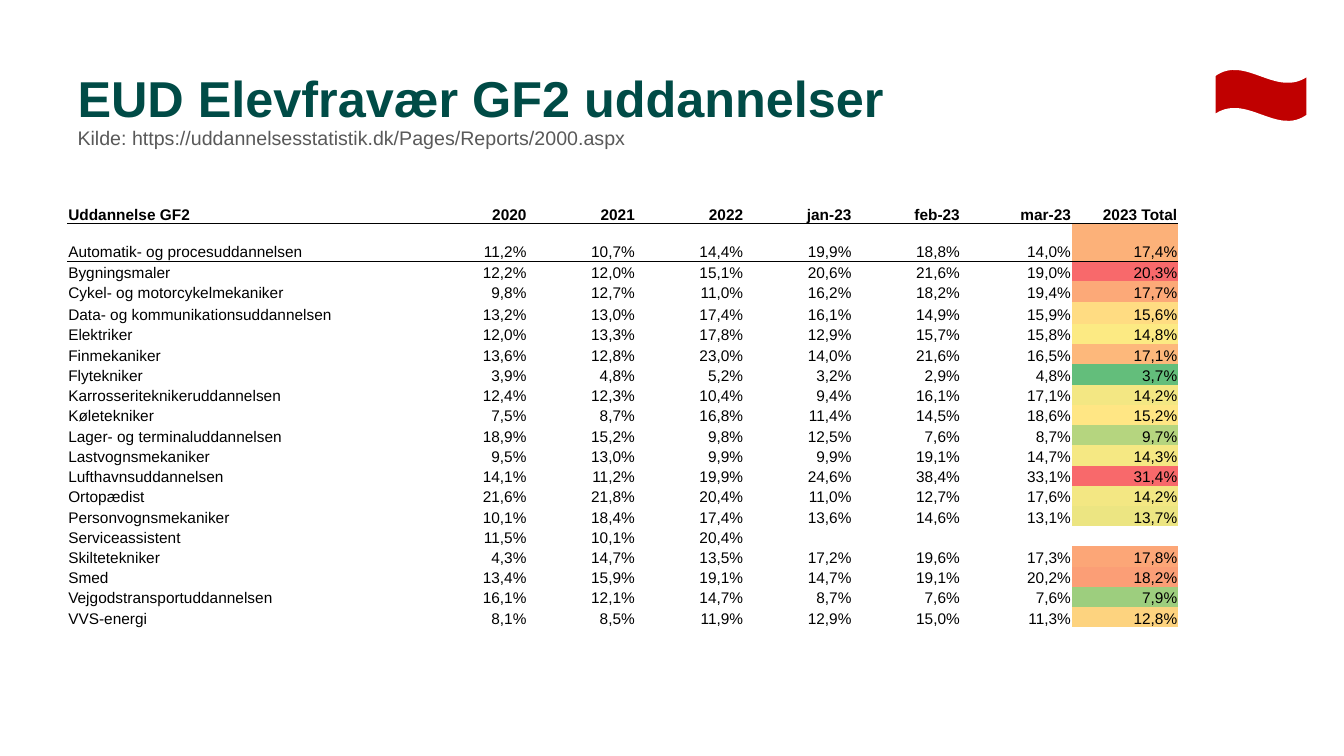
from dataclasses import dataclass

from lxml import etree
from pptx import Presentation
from pptx.dml.color import RGBColor
from pptx.enum.shapes import MSO_SHAPE
from pptx.enum.text import MSO_ANCHOR, MSO_AUTO_SIZE, PP_ALIGN
from pptx.oxml.ns import qn
from pptx.util import Cm, Pt

WAVE = MSO_SHAPE.WAVE
TOP = MSO_ANCHOR.TOP
BOTTOM = MSO_ANCHOR.BOTTOM
LEFT = PP_ALIGN.LEFT
RIGHT = PP_ALIGN.RIGHT
NO_AUTOFIT = MSO_AUTO_SIZE.NONE
NO_GRID_STYLE = "{2D5ABB26-0587-4C30-8999-92F81FD0307C}"


@dataclass(frozen=True)
class Theme:
    font: str = "Arial"
    title_size: int = 36
    source_size: int = 14
    table_size: int = 11
    title_color: str = "004B46"
    source_color: str = "595959"
    text_color: str = "000000"
    flag_color: str = "C00000"
    flag_line: str = "FFFFFF"


@dataclass(frozen=True)
class Box:
    left: float
    top: float
    width: float
    height: float

    def lengths(self):
        return Cm(self.left), Cm(self.top), Cm(self.width), Cm(self.height)


THEME = Theme()
TITLE = "EUD Elevfravær GF2 uddannelser"
SOURCE = "Kilde: https://uddannelsesstatistik.dk/Pages/Reports/2000.aspx"
HEADINGS = ["Uddannelse GF2", "2020", "2021", "2022", "jan-23", "feb-23", "mar-23", "2023 Total"]
COLUMN_WIDTHS = [8.86] + [2.73] * 5 + [2.8, 2.68]
TALL_ROW, MEDIUM_ROW, ROW = 0.94, 0.56, 0.51
ROW_HEIGHTS = [TALL_ROW] * 2 + [ROW] * 2 + [MEDIUM_ROW] + [ROW] * 15
ABSENCE = [
    ("Automatik- og procesuddannelsen", "11,2 10,7 14,4 19,9 18,8 14,0 17,4", "FCB179"),
    ("Bygningsmaler", "12,2 12,0 15,1 20,6 21,6 19,0 20,3", "F8696B"),
    ("Cykel- og motorcykelmekaniker", "9,8 12,7 11,0 16,2 18,2 19,4 17,7", "FCA978"),
    ("Data- og kommunikationsuddannelsen", "13,2 13,0 17,4 16,1 14,9 15,9 15,6", "FFDC82"),
    ("Elektriker", "12,0 13,3 17,8 12,9 15,7 15,8 14,8", "FCEA83"),
    ("Finmekaniker", "13,6 12,8 23,0 14,0 21,6 16,5 17,1", "FDB87B"),
    ("Flytekniker", "3,9 4,8 5,2 3,2 2,9 4,8 3,7", "63BE7B"),
    ("Karrosseriteknikeruddannelsen", "12,4 12,3 10,4 9,4 16,1 17,1 14,2", "F3E783"),
    ("Køletekniker", "7,5 8,7 16,8 11,4 14,5 18,6 15,2", "FFE684"),
    ("Lager- og terminaluddannelsen", "18,9 15,2 9,8 12,5 7,6 8,7 9,7", "B5D57F"),
    ("Lastvognsmekaniker", "9,5 13,0 9,9 9,9 19,1 14,7 14,3", "F5E883"),
    ("Lufthavnsuddannelsen", "14,1 11,2 19,9 24,6 38,4 33,1 31,4", "F8696B"),
    ("Ortopædist", "21,6 21,8 20,4 11,0 12,7 17,6 14,2", "F3E783"),
    ("Personvognsmekaniker", "10,1 18,4 17,4 13,6 14,6 13,1 13,7", "ECE582"),
    ("Serviceassistent", "11,5 10,1 20,4", None),
    ("Skiltetekniker", "4,3 14,7 13,5 17,2 19,6 17,3 17,8", "FCA677"),
    ("Smed", "13,4 15,9 19,1 14,7 19,1 20,2 18,2", "FB9E76"),
    ("Vejgodstransportuddannelsen", "16,1 12,1 14,7 8,7 7,6 7,6 7,9", "9DCE7E"),
    ("VVS-energi", "8,1 8,5 11,9 12,9 15,0 11,3 12,8", "FDD37F"),
]


def add_span(para, text, size, color, bold=False):
    span = para.add_run()
    span.text = text
    span.font.name = THEME.font
    span.font.size = Pt(size)
    span.font.bold = bold
    span.font.color.rgb = RGBColor.from_string(color)


def place_title(page, box):
    title = page.shapes.title
    title.left, title.top, title.width, title.height = box.lengths()
    frame = title.text_frame
    frame.auto_size = NO_AUTOFIT
    frame.word_wrap = True
    frame.vertical_anchor = TOP
    para = frame.paragraphs[0]
    para.alignment = LEFT
    para.line_spacing = 0.9
    add_span(para, TITLE, THEME.title_size, THEME.title_color, bold=True)
    para.add_line_break()
    line_break = para._p.find(qn("a:br"))
    etree.SubElement(line_break, qn("a:rPr"), sz=str(THEME.title_size * 100))
    add_span(para, SOURCE, THEME.source_size, THEME.source_color)


def add_rule(cell, side):
    rule = etree.Element(qn(f"a:{side}"), w=str(Pt(1)))
    fill = etree.SubElement(rule, qn("a:solidFill"))
    etree.SubElement(fill, qn("a:srgbClr"), val=THEME.text_color)
    cell._tc.get_or_add_tcPr().insert(0, rule)


def fill_cell(cell, text, alignment, bold, color):
    cell.margin_left = cell.margin_top = cell.margin_right = Cm(0.02)
    cell.margin_bottom = Cm(0)
    cell.vertical_anchor = BOTTOM
    if color:
        cell.fill.solid()
        cell.fill.fore_color.rgb = RGBColor.from_string(color)
    else:
        cell.fill.background()
    para = cell.text_frame.paragraphs[0]
    para.alignment = alignment
    if text:
        add_span(para, text, THEME.table_size, THEME.text_color, bold)
    else:
        etree.SubElement(para._p, qn("a:endParaRPr"), sz=str(THEME.table_size * 100))


def table_rows():
    yield HEADINGS, None
    for education, rates, total_color in ABSENCE:
        texts = [education] + [f"{rate}%" for rate in rates.split()]
        yield texts + [""] * (len(HEADINGS) - len(texts)), total_color


def place_absence_table(page, box):
    frame = page.shapes.add_table(len(ROW_HEIGHTS), len(HEADINGS), *box.lengths())
    table = frame.table
    table.first_row = table.horz_banding = False
    table._tbl.tblPr.find(qn("a:tableStyleId")).text = NO_GRID_STYLE
    for column, width in zip(table.columns, COLUMN_WIDTHS):
        column.width = Cm(width)
    for row, height in zip(table.rows, ROW_HEIGHTS):
        row.height = Cm(height)
    total_column = len(HEADINGS) - 1
    for row_index, (texts, total_color) in enumerate(table_rows()):
        for column_index, text in enumerate(texts):
            cell = table.cell(row_index, column_index)
            alignment = RIGHT if column_index else LEFT
            color = total_color if column_index == total_column else None
            fill_cell(cell, text, alignment, row_index == 0, color)
            if row_index < 2:
                add_rule(cell, "lnT" if row_index else "lnB")


def place_flag(page, box):
    flag = page.shapes.add_shape(WAVE, *box.lengths())
    flag.shadow.inherit = False
    flag.fill.solid()
    flag.fill.fore_color.rgb = RGBColor.from_string(THEME.flag_color)
    flag.line.color.rgb = RGBColor.from_string(THEME.flag_line)
    flag.line.width = Pt(1.5)


def main():
    deck = Presentation()
    deck.slide_width, deck.slide_height = Cm(33.87), Cm(19.05)
    page = deck.slides.add_slide(deck.slide_layouts[5])
    place_title(page, Box(1.7, 1.73, 30.1, 2.97))
    place_absence_table(page, Box(1.7, 4.7, sum(COLUMN_WIDTHS), sum(ROW_HEIGHTS)))
    place_flag(page, Box(30.61, 1.73, 2.34, 1.35))
    deck.save("out.pptx")


if __name__ == "__main__":
    main()
